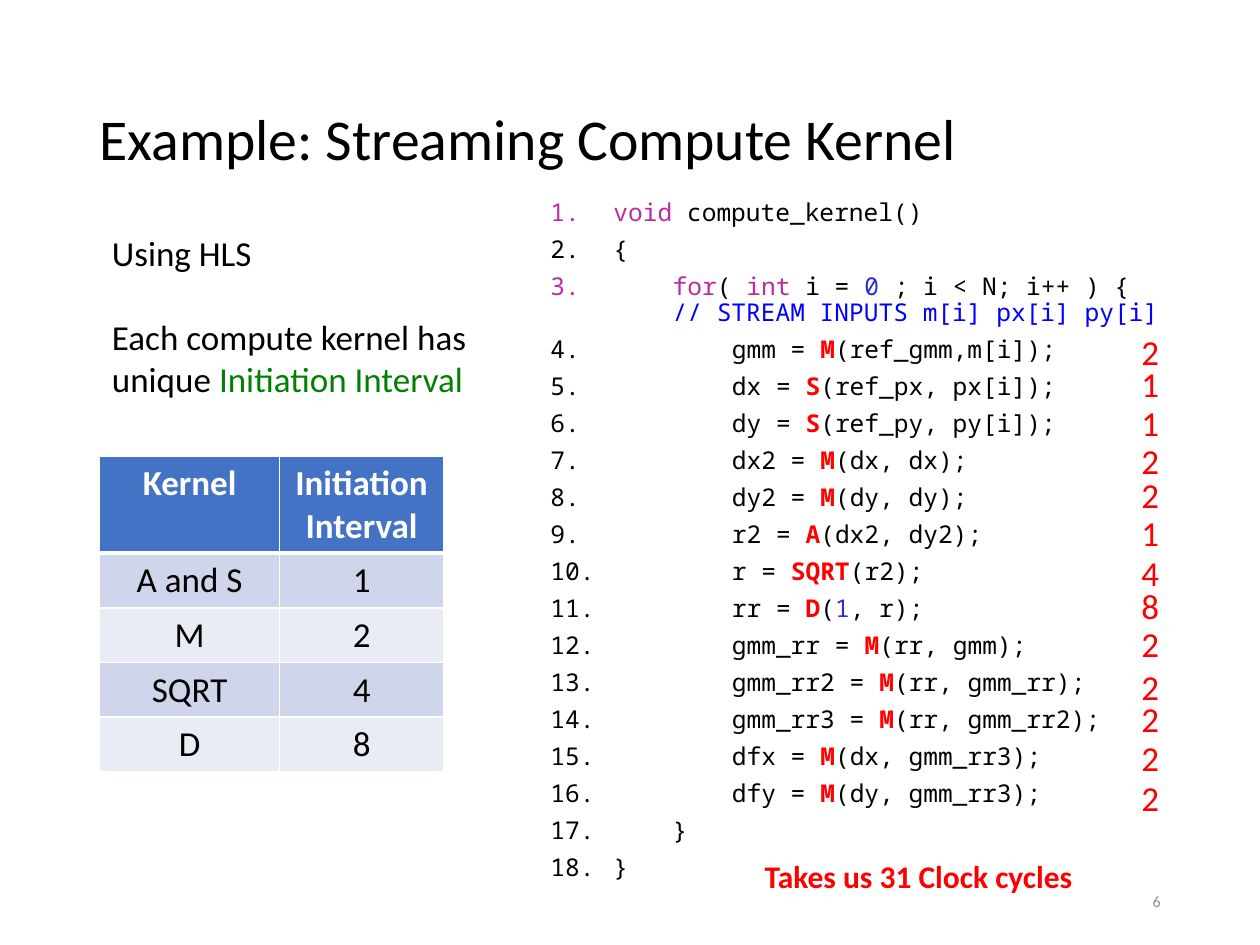
from pptx import Presentation
from pptx.dml.color import RGBColor
from pptx.enum.text import MSO_ANCHOR as Anchor, PP_ALIGN as Align
from pptx.oxml.ns import qn
from pptx.util import Inches, Pt
from lxml.etree import SubElement

BLACK, WHITE, RED, GREEN, GRAY = "000000", "FFFFFF", "FF0000", "008000", "8C8C8C"
PURPLE, NUMBER_BLUE, COMMENT_BLUE = "BB2CA2", "272AD8", "0000FF"
HEADER_FILL, BAND_FILLS = "4472C4", ("CFD5EA", "E9EBF5")

TITLE = "Example: Streaming Compute Kernel"
NOTES = [
    [("Using HLS", BLACK)],
    [("Each compute kernel has unique ", BLACK), ("Initiation Interval", GREEN)],
]
INTERVALS = [
    ("Kernel", "Initiation Interval"),
    ("A and S", "1"),
    ("M", "2"),
    ("SQRT", "4"),
    ("D", "8"),
]
COLUMN_WIDTHS = (1.43, 1.3)
HEADER_HEIGHT, ROW_HEIGHT = 0.77, 0.43

# Indent level and code; "|" separates the pieces that are coloured on their own
COMMENT = "// STREAM INPUTS m[i] px[i] py[i]"
CODE = [
    (0, "void| compute_kernel()"),
    (0, "{"),
    (1, "for|( |int| i = |0| ; i < N; i++ ) {|\n|" + COMMENT),
    (2, "gmm = |M|(ref_gmm,m[i]);"),
    (2, "dx = |S|(ref_px, px[i]);"),
    (2, "dy = |S|(ref_py, py[i]);"),
    (2, "dx2 = |M|(dx, dx);"),
    (2, "dy2 = |M|(dy, dy);"),
    (2, "r2 = |A|(dx2, dy2);"),
    (2, "r = |SQRT|(r2);"),
    (2, "rr = |D|(|1|, r);"),
    (2, "gmm_rr = |M|(rr, gmm);"),
    (2, "gmm_rr2 = |M|(rr, gmm_rr);"),
    (2, "gmm_rr3 = |M|(rr, gmm_rr2);"),
    (2, "dfx = |M|(dx, gmm_rr3);"),
    (2, "dfy = |M|(dy, gmm_rr3);"),
    (1, "}"),
    (0, "}"),
]
KERNELS = ("M", "S", "A", "D", "SQRT")
TOKEN_COLORS = {
    **dict.fromkeys(("void", "for", "int"), PURPLE),
    **dict.fromkeys(("0", "1"), NUMBER_BLUE),
    **dict.fromkeys(KERNELS, RED),
    COMMENT: COMMENT_BLUE,
}
NUMBER_WIDTH, INDENT_STEP = 0.5, 0.47

# Clock cycles of each statement and the top of its label
CYCLES = [
    (2, 2.57), (1, 2.83), (1, 3.14), (2, 3.44), (2, 3.71), (1, 4.01), (4, 4.33),
    (8, 4.59), (2, 4.89), (2, 5.23), (2, 5.49), (2, 5.8), (2, 6.11),
]


def rgb(color):
    return RGBColor.from_string(color)


def add_span(para, text, color, size, font="Calibri", bold=False):
    span = para.add_run()
    span.text = text
    span.font.color.rgb = rgb(color)
    for name, value in {"name": font, "size": Pt(size), "bold": bold}.items():
        setattr(span.font, name, value)


def add_box(page, place, anchor=Anchor.TOP, wrap=True):
    """Add an empty text box and return its text frame."""
    frame = page.shapes.add_textbox(*map(Inches, place)).text_frame
    frame.word_wrap = wrap
    frame.vertical_anchor = anchor
    return frame


def next_para(frame, index):
    return frame.add_paragraph() if index else frame.paragraphs[0]


def number_para(para, left):
    """Number the paragraph, with its text starting at left inches."""
    props = para._p.get_or_add_pPr()
    props.set("marL", str(Inches(left)))
    props.set("indent", str(-Inches(left)))
    SubElement(props, qn("a:buFont"), typeface="+mj-lt")
    SubElement(props, qn("a:buAutoNum"), type="arabicPeriod")


def add_code(page):
    frame = add_box(page, (4.27, 1.54, 5.48, 5.56))
    for index, (level, line) in enumerate(CODE):
        para = next_para(frame, index)
        para.line_spacing = 0.9
        para.space_before = Pt(6)
        number_para(para, NUMBER_WIDTH + level * INDENT_STEP)
        for token in line.split("|"):
            if token == "\n":
                para.add_line_break()
            else:
                add_span(para, token, TOKEN_COLORS.get(token, BLACK), 14,
                         "Noto Sans Mono", token in KERNELS)


def set_borders(cell, bottom):
    props = cell._tc.get_or_add_tcPr()
    for side, width in {"L": 1, "R": 1, "T": 1, "B": bottom}.items():
        line = SubElement(props, qn("a:ln" + side), w=str(Pt(width)))
        SubElement(SubElement(line, qn("a:solidFill")), qn("a:srgbClr"), val=WHITE)


def add_intervals(page):
    heights = [HEADER_HEIGHT] + [ROW_HEIGHT] * (len(INTERVALS) - 1)
    place = (0.79, 3.62, sum(COLUMN_WIDTHS), sum(heights))
    table = page.shapes.add_table(len(INTERVALS), len(COLUMN_WIDTHS),
                                  *map(Inches, place)).table
    for column, width in zip(table.columns, COLUMN_WIDTHS):
        column.width = Inches(width)
    for index, (row, height, texts) in enumerate(zip(table.rows, heights, INTERVALS)):
        row.height = Inches(height)
        header = index == 0
        for cell, text in zip(row.cells, texts):
            set_borders(cell, 3 if header else 1)
            cell.fill.solid()
            cell.fill.fore_color.rgb = rgb(HEADER_FILL if header else BAND_FILLS[(index - 1) % 2])
            para = cell.text_frame.paragraphs[0]
            para.alignment = Align.CENTER
            add_span(para, text, WHITE if header else BLACK, 20, bold=header)


def main():
    deck = Presentation()
    deck.slide_width, deck.slide_height = Inches(10), Inches(7.5)
    page = deck.slides.add_slide(deck.slide_layouts[6])

    title = add_box(page, (0.69, 0.4, 8.62, 1.45), Anchor.MIDDLE).paragraphs[0]
    title.line_spacing = 0.9
    add_span(title, TITLE, BLACK, 33)

    page_number = add_box(page, (7.06, 6.95, 2.25, 0.4), Anchor.MIDDLE).paragraphs[0]
    page_number.alignment = Align.RIGHT
    add_span(page_number, "6", GRAY, 9)

    add_code(page)
    add_intervals(page)

    for cycles, top in CYCLES:
        label = add_box(page, (8.96, top, 0.53, 0.53))
        add_span(label.paragraphs[0], str(cycles), RED, 20)

    notes = add_box(page, (0.79, 1.79, 3.47, 1.45))
    for index, spans in enumerate(NOTES):
        para = next_para(notes, index)
        para.space_before = Pt(24 * index)
        for text, color in spans:
            add_span(para, text, color, 20)

    total = add_box(page, (5.97, 6.75, 2.66, 0.4), wrap=False)
    add_span(total.paragraphs[0], "Takes us 31 Clock cycles", RED, 18, bold=True)

    deck.save("out.pptx")


if __name__ == "__main__":
    main()
